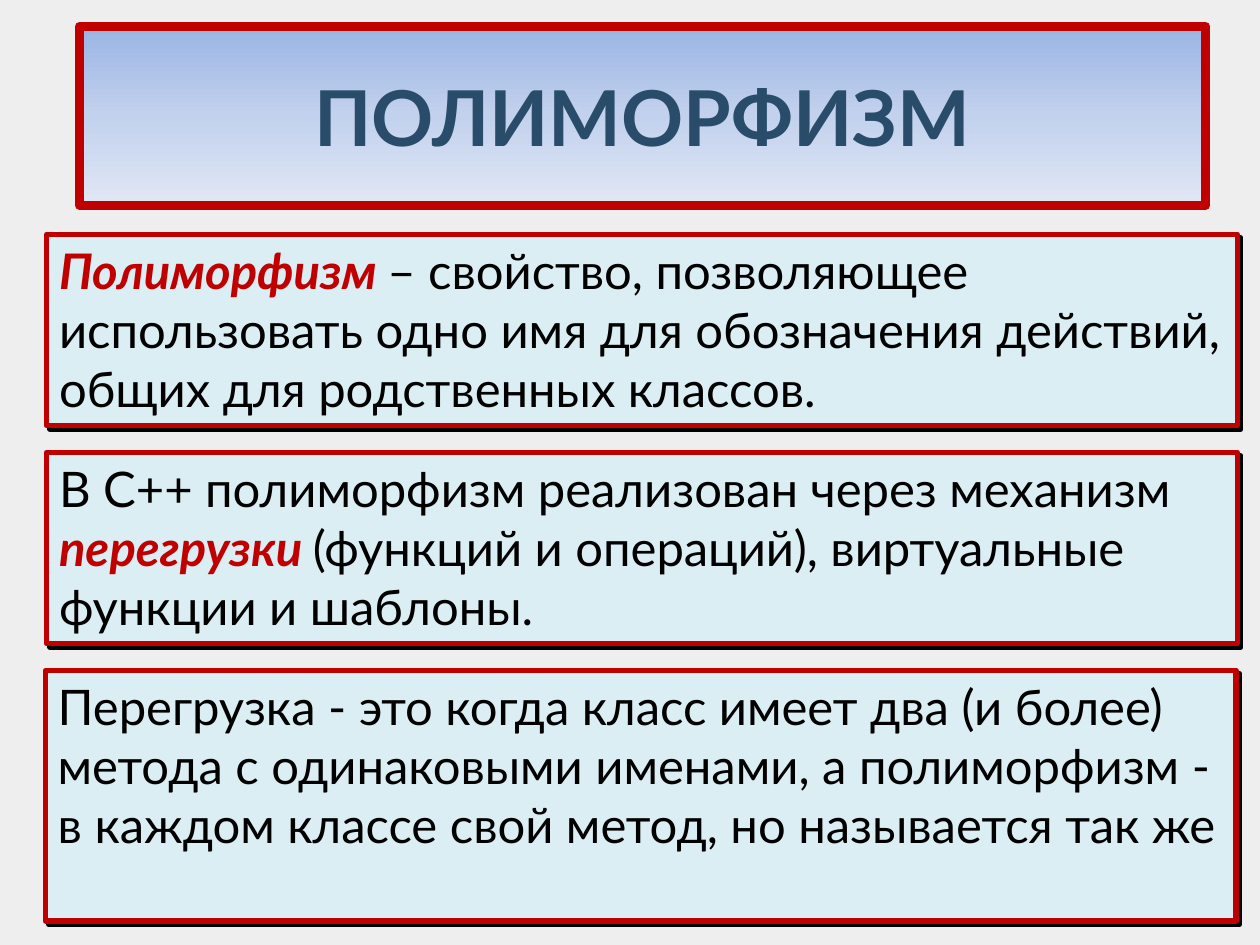
from dataclasses import dataclass

from lxml import etree
from pptx import Presentation
from pptx.dml.color import RGBColor
from pptx.enum.shapes import MSO_SHAPE as Shape
from pptx.enum.text import MSO_ANCHOR as Anchor, MSO_AUTO_SIZE as AutoSize, PP_ALIGN as Align
from pptx.oxml import parse_xml
from pptx.oxml.ns import nsdecls, qn
from pptx.util import Inches, Pt


@dataclass(frozen=True)
class Theme:
    font: str = "Lato"
    background: str = "EEEEEE"
    panel: str = "DBEEF4"
    accent: str = "C00000"
    text: str = "000000"
    title: str = "284C6A"
    title_gradient: tuple = ((0, "9AB5E4"), (50, "C2D1ED"), (100, "E1E8F5"))
    title_size: int = 44
    body_size: int = 28
    title_border: int = 5
    panel_border: int = 3
    shadow_distance: float = 2.8


class SlideBuilder:
    def __init__(self, slide, theme):
        self.slide = slide
        self.theme = theme

    def background(self):
        fill = self.slide.background.fill
        fill.solid()
        fill.fore_color.rgb = RGBColor.from_string(self.theme.background)

    def border(self, shape, width):
        shape.line.color.rgb = RGBColor.from_string(self.theme.accent)
        shape.line.width = Pt(width)

    def style_font(self, font, size, color):
        font.name = self.theme.font
        font.size = Pt(size)
        font.color.rgb = RGBColor.from_string(color)

    def gradient(self, shape, stops):
        shape.fill.gradient()
        shape.fill.gradient_angle = 270  # top to bottom
        stop_list = shape.fill._xPr.find(qn("a:gradFill")).find(qn("a:gsLst"))
        for stop in list(stop_list):
            stop_list.remove(stop)
        for position, color in stops:
            stop_list.append(parse_xml(
                f'<a:gs {nsdecls("a")} pos="{position * 1000}">'
                f'<a:srgbClr val="{color}"/></a:gs>'))

    def hard_shadow(self, shape):
        shape.shadow.inherit = False
        effects = shape._element.spPr.find(qn("a:effectLst"))
        shadow = etree.SubElement(
            effects, qn("a:outerShdw"), blurRad="0",
            dist=str(Pt(self.theme.shadow_distance)),
            dir=str(45 * 60000), algn="ctr", rotWithShape="0")
        etree.SubElement(shadow, qn("a:srgbClr"), val=self.theme.text)

    def title(self, text, left, top, width, height):
        shape = self.slide.shapes.title
        shape.left, shape.top = Inches(left), Inches(top)
        shape.width, shape.height = Inches(width), Inches(height)
        self.gradient(shape, self.theme.title_gradient)
        self.border(shape, self.theme.title_border)
        frame = shape.text_frame
        frame.text = text
        frame.auto_size = AutoSize.NONE
        frame.vertical_anchor = Anchor.MIDDLE
        paragraph = frame.paragraphs[0]
        paragraph.alignment = Align.CENTER
        self.style_font(paragraph.font, self.theme.title_size, self.theme.title)
        paragraph.font.bold = True

    def panel(self, parts, left, top, width, height):
        """Framed text; each part is a (text, is_term) pair."""
        shape = self.slide.shapes.add_shape(
            Shape.RECTANGLE, Inches(left), Inches(top), Inches(width), Inches(height))
        shape.fill.solid()
        shape.fill.fore_color.rgb = RGBColor.from_string(self.theme.panel)
        self.border(shape, self.theme.panel_border)
        self.hard_shadow(shape)
        frame = shape.text_frame
        frame.word_wrap = True
        frame.vertical_anchor = Anchor.TOP
        paragraph = frame.paragraphs[0]
        paragraph.alignment = Align.LEFT
        for text, is_term in parts:
            run = paragraph.add_run()
            run.text = text
            color = self.theme.accent if is_term else self.theme.text
            self.style_font(run.font, self.theme.body_size, color)
            run.font.bold = run.font.italic = is_term


PANEL_WIDTH = 9.45
# Left, top, height and text of each panel
PANELS = [
    (0.37, 1.86, 1.52, [
        ("Полиморфизм ", True),
        ("– свойство, позволяющее использовать одно имя для обозначения "
         "действий, общих для родственных классов.", False)]),
    (0.37, 3.59, 1.52, [
        ("В С++ полиморфизм реализован через механизм ", False),
        ("перегрузки ", True),
        ("(функций и операций), виртуальные функции и шаблоны.", False)]),
    (0.36, 5.32, 1.99, [
        ("Перегрузка - это когда класс имеет два (и более) метода с одинаковыми "
         "именами, а полиморфизм - в каждом классе свой метод, но называется "
         "так же", False)]),
]


def main():
    presentation = Presentation()
    presentation.slide_width, presentation.slide_height = Inches(10), Inches(7.5)
    title_only = presentation.slide_layouts[5]
    builder = SlideBuilder(presentation.slides.add_slide(title_only), Theme())
    builder.background()

    # Heading
    builder.title("ПОЛИМОРФИЗМ", 0.63, 0.21, 8.94, 1.42)

    # Definitions
    for left, top, height, parts in PANELS:
        builder.panel(parts, left, top, PANEL_WIDTH, height)

    presentation.save("out.pptx")


if __name__ == "__main__":
    main()
